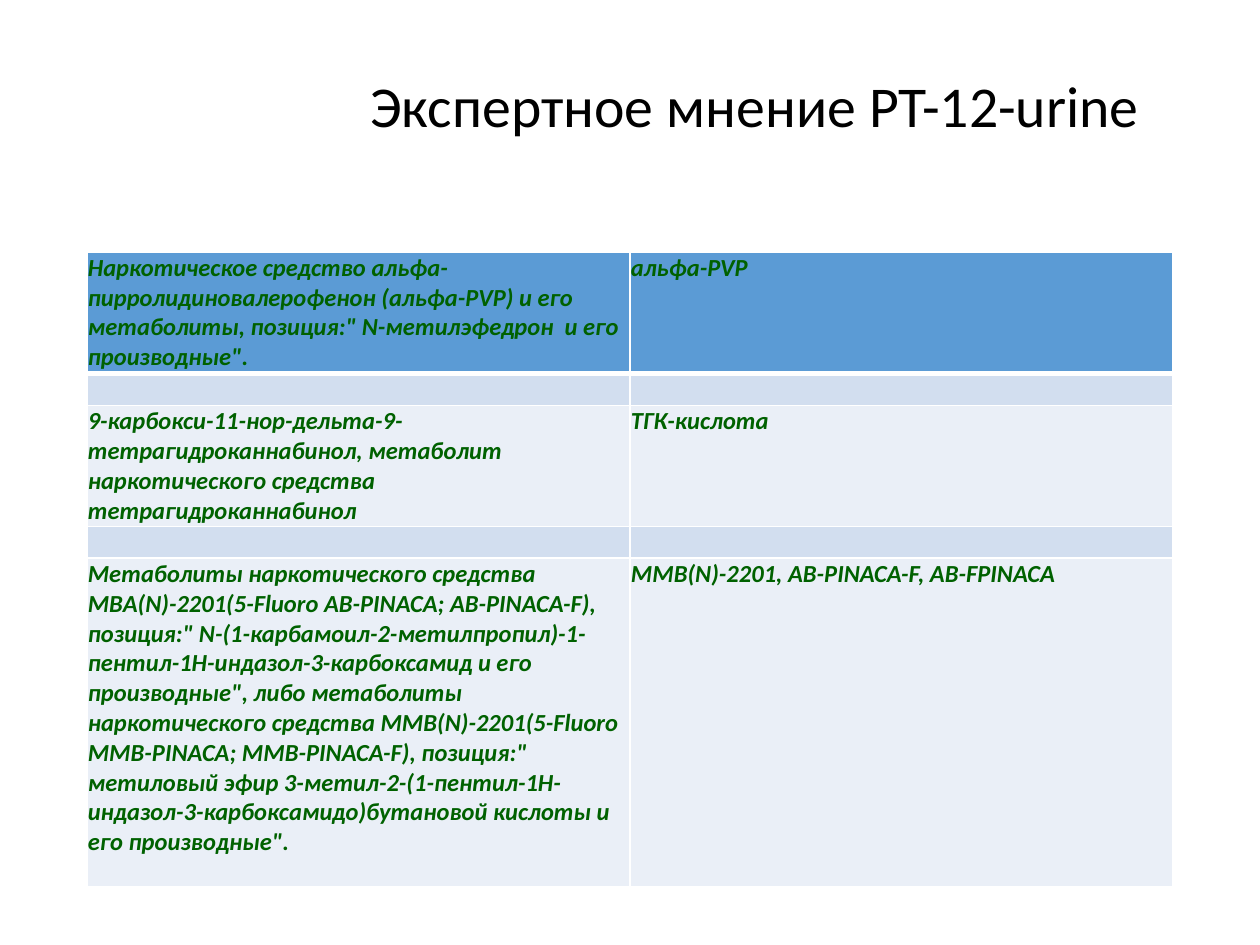
import pptx
import pptx.dml.color
import pptx.enum.text
import pptx.oxml.ns
import pptx.util
from lxml import etree

Cm, Pt = pptx.util.Cm, pptx.util.Pt

FONT = "Calibri"
WHITE, HEADER, BAND, PALE = "FFFFFF", "5B9BD5", "D2DEEF", "EAEFF7"
GREEN = "006100"

# Substance groups and their short names; empty rows separate them
ROWS = [
    ("Наркотическое средство aльфа-пирролидиновалерофенон (альфа-PVP) и его "
     "метаболиты, позиция:\" N-метилэфедрон  и его производные\".",
     "альфа-PVP"),
    ("", ""),
    ("9-карбокси-11-нор-дельта-9-тетрагидроканнабинол, метаболит "
     "наркотического средства тетрагидроканнабинол",
     "ТГК-кислота"),
    ("", ""),
    ("Метаболиты наркотического средства MBA(N)-2201(5-Fluoro AB-PINACA; "
     "AB-PINACA-F), позиция:\" N-(1-карбамоил-2-метилпропил)-1-пентил-1Н-"
     "индазол-3-карбоксамид и его производные\", либо метаболиты "
     "наркотического средства MMB(N)-2201(5-Fluoro MMB-PINACA; MMB-PINACA-F), "
     "позиция:\" метиловый эфир 3-метил-2-(1-пентил-1H-индазол-3-"
     "карбоксамидо)бутановой кислоты и его производные\".",
     "MMB(N)-2201, AB-PINACA-F, AB-FPINACA"),
]
ROW_HEIGHTS = [2.45, 0.64, 2.44, 0.64, 6.62]


def color(value):
    return pptx.dml.color.RGBColor.from_string(value)


def set_font(para, size, value, strong=False):
    font = para.font
    font.name, font.size = FONT, Pt(size)
    font.bold = font.italic = strong
    font.color.rgb = color(value)


def add_title(page, text):
    box = page.shapes.add_textbox(Cm(2.16), Cm(1.07), Cm(21.06), Cm(2.26))
    frame = box.text_frame
    frame.word_wrap = True
    frame.vertical_anchor = pptx.enum.text.MSO_ANCHOR.MIDDLE
    para = frame.paragraphs[0]
    para.text = text
    para.alignment = pptx.enum.text.PP_ALIGN.RIGHT
    para.line_spacing = 0.9
    set_font(para, 33, BLACK)


def set_border(cell, side, width):
    properties = cell._tc.get_or_add_tcPr()
    tag = pptx.oxml.ns.qn
    line = etree.SubElement(properties, tag("a:ln" + side), w=str(Pt(width)))
    fill = etree.SubElement(line, tag("a:solidFill"))
    etree.SubElement(fill, tag("a:srgbClr"), val=WHITE)


def fill_cell(cell, text, row):
    # Borders come before the fill; a thick line sits under the header
    widths = {"L": 1, "R": 1, "T": 3 if row == 1 else 1, "B": 3 if row == 0 else 1}
    for side, width in widths.items():
        set_border(cell, side, width)
    cell.fill.solid()
    cell.fill.fore_color.rgb = color(HEADER if row == 0 else BAND if row % 2 else PALE)
    cell.margin_left = cell.margin_right = cell.margin_top = Cm(0.02)
    cell.margin_bottom = 0
    para = cell.text_frame.paragraphs[0]
    para.text = text
    set_font(para, 14, GREEN, strong=True)


def add_substance_table(page):
    table = page.shapes.add_table(
        len(ROWS), 2, Cm(1.75), Cm(5.08), Cm(21.9), Cm(sum(ROW_HEIGHTS))).table
    for row, (texts, height) in enumerate(zip(ROWS, ROW_HEIGHTS)):
        table.rows[row].height = Cm(height)
        for column, text in enumerate(texts):
            fill_cell(table.cell(row, column), text, row)


BLACK = "000000"


def main():
    deck = pptx.Presentation()
    deck.slide_width, deck.slide_height = Cm(25.4), Cm(19.05)
    page = deck.slides.add_slide(deck.slide_layouts[6])
    add_title(page, "Экспертное мнение PT-12-urine")
    add_substance_table(page)
    deck.save("out.pptx")


if __name__ == "__main__":
    main()
